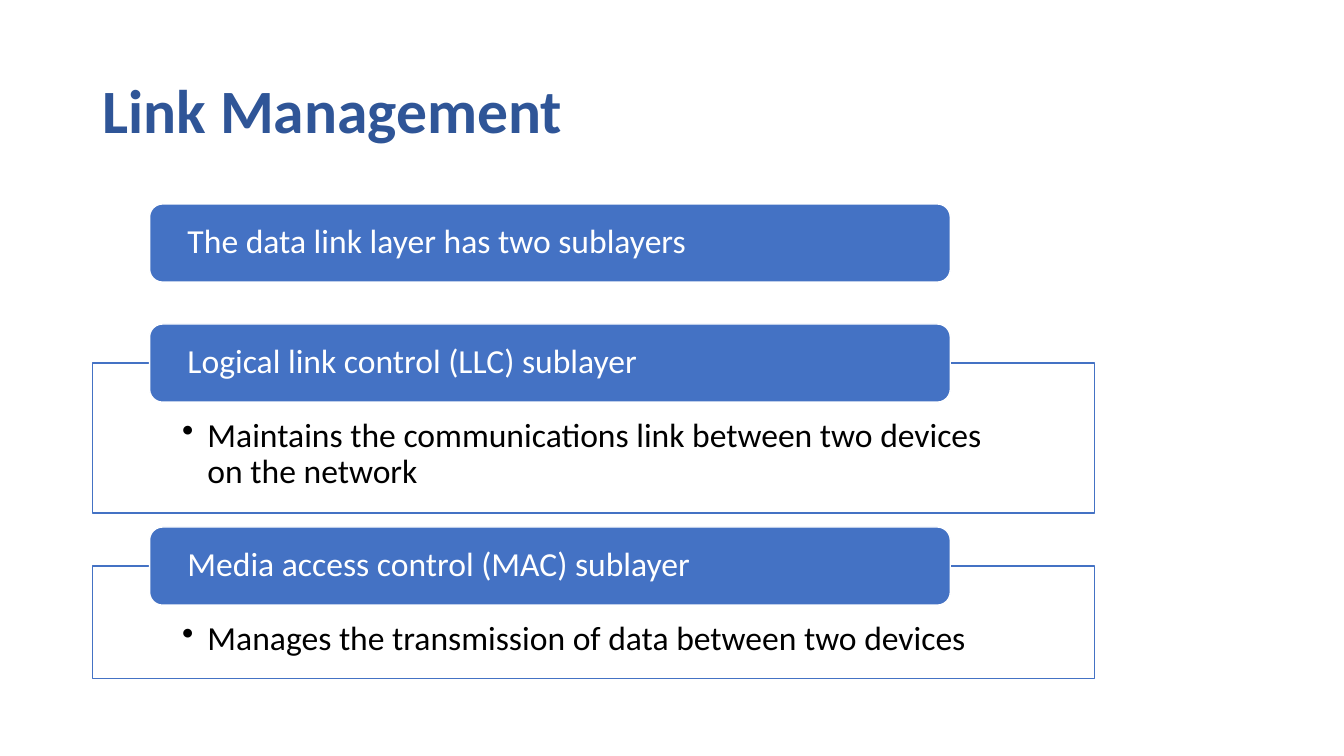
from pptx import Presentation
from pptx import util as u
from pptx.dml import color
from pptx.enum import shapes, text
from pptx.oxml import ns
from lxml import etree

TITLE = "Link Management"
PARTS = [
    ("The data link layer has two sublayers", "", 1.69),
    ("Logical link control (LLC) sublayer",
     "Maintains the communications link between two devices on the network", 3.78),
    ("Media access control (MAC) sublayer",
     "Manages the transmission of data between two devices", 2.83),
]
NAVY = color.RGBColor(0x2F, 0x55, 0x97)
BLUE = color.RGBColor(0x44, 0x72, 0xC4)
WHITE = color.RGBColor(0xFF, 0xFF, 0xFF)
BLACK = color.RGBColor(0, 0, 0)
FONT = "Calibri"
LEFT, TOP, GAP = 2.33, 5.14, 0.35
WIDE, HEAD_X, HEAD_W, HEAD_H = 25.25, 3.77, 20.18, 1.97


def write(shape, words, size, ink, anchor, bold=False):
    frame = shape.text_frame
    frame.text = words
    frame.word_wrap = True
    frame.auto_size = text.MSO_AUTO_SIZE.NONE
    frame.vertical_anchor = anchor
    para = frame.paragraphs[0]
    para.alignment = text.PP_ALIGN.LEFT
    para.line_spacing = 0.9
    font = para.runs[0].font
    font.name, font.size, font.bold = FONT, u.Pt(size), bold
    font.color.rgb = ink
    return para


def block(slide, kind, place, fill, line, inset):
    shape = slide.shapes.add_shape(kind, *map(u.Cm, place))
    shape.shadow.inherit = False
    shape.fill.solid()
    shape.fill.fore_color.rgb = fill
    shape.line.color.rgb = line
    shape.line.width = u.Pt(1)
    frame = shape.text_frame
    (frame.margin_left, frame.margin_top,
     frame.margin_right, frame.margin_bottom) = map(u.Cm, inset)
    return shape


def frame_box(slide, words, top, tall):
    box = block(slide, shapes.MSO_SHAPE.RECTANGLE, (LEFT, top, WIDE, tall),
                WHITE, BLUE, (2.26, 1.4, 2.26, 0.48))
    tint = box.fill._xPr.find(ns.qn("a:solidFill"))[0]
    etree.SubElement(tint, ns.qn("a:alpha"), val="90000")
    para = write(box, words, 24, BLACK, text.MSO_ANCHOR.TOP)
    props = para._p.get_or_add_pPr()
    props.set("marL", str(u.Cm(0.64)))
    props.set("indent", str(u.Cm(-0.64)))
    etree.SubElement(props, ns.qn("a:buChar"), char="•")


def main():
    deck = Presentation()
    deck.slide_width, deck.slide_height = u.Cm(33.87), u.Cm(19.05)
    slide = deck.slides.add_slide(deck.slide_layouts[5])
    title = slide.shapes.title
    title.left, title.top = u.Cm(LEFT), u.Cm(1.01)
    title.width, title.height = u.Cm(29.21), u.Cm(3.68)
    write(title, TITLE, 44, NAVY, text.MSO_ANCHOR.MIDDLE, True)

    top = TOP
    for head, note, tall in PARTS:
        mid = top + HEAD_H / 2
        if note:
            frame_box(slide, note, mid, tall)
        bar = block(slide, shapes.MSO_SHAPE.ROUNDED_RECTANGLE,
                    (HEAD_X, top, HEAD_W, HEAD_H), BLUE, WHITE,
                    (0.86, 0.1, 0.86, 0.1))
        write(bar, head, 24, WHITE, text.MSO_ANCHOR.MIDDLE)
        top = mid + tall + GAP
    deck.save("out.pptx")


if __name__ == "__main__":
    main()
